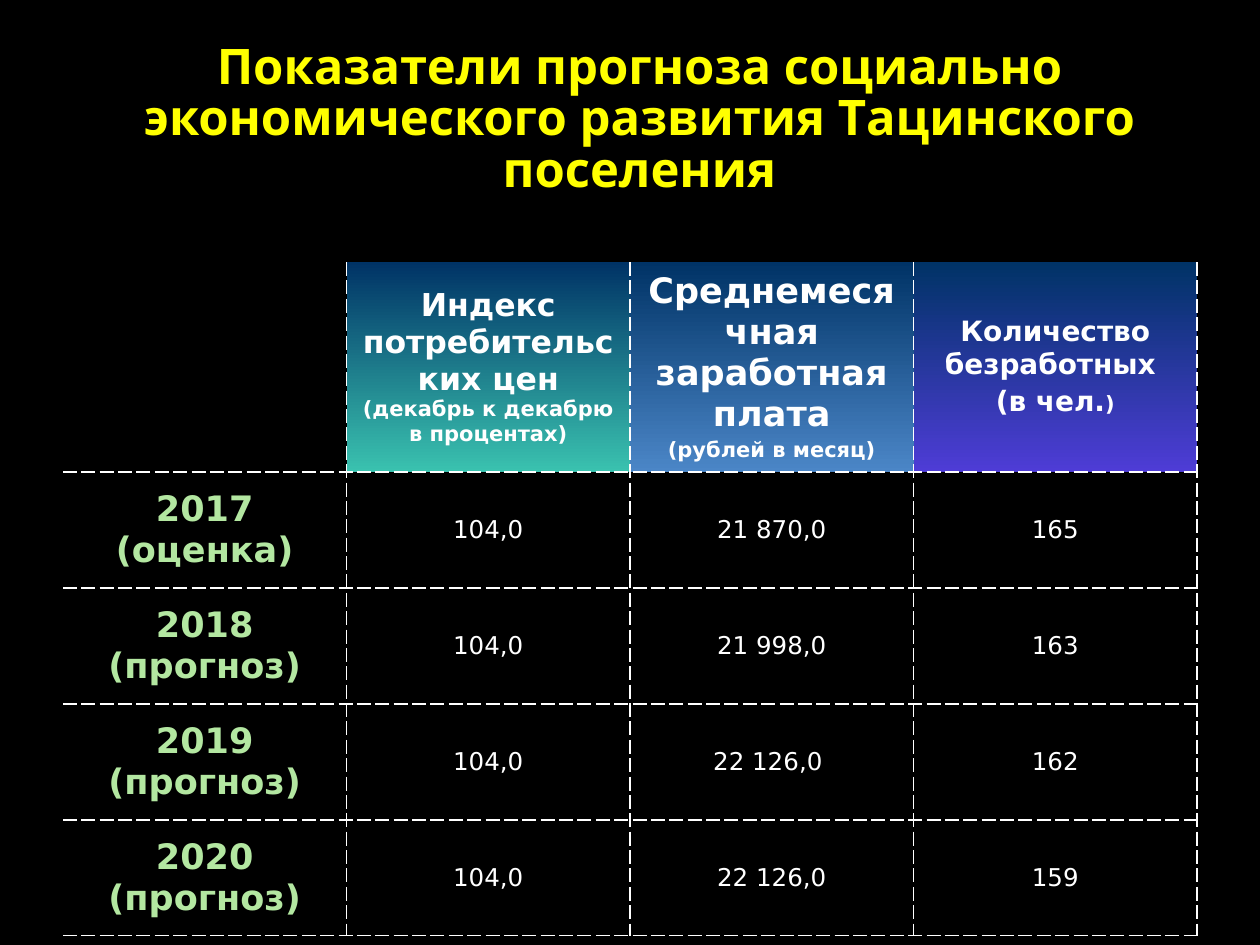
from lxml import etree
from pptx import Presentation
from pptx.dml.color import RGBColor
from pptx.enum import text as t
from pptx.oxml import ns
from pptx.util import Inches, Pt

WHITE, YELLOW, GREEN, NAVY = "FFFFFF", "FFFF00", "B3E7A1", "003366"
TABLE_FONT = "DejaVu Sans"

TITLE = "Показатели прогноза социально экономического развития Тацинского поселения"

# Each heading: gradient end colour, then paragraphs of (text, size) runs
HEADINGS = [
    ("3AC2AF", [[("Индекс потребительских цен ", 18),
                 ("(декабрь к декабрю в процентах)", 12)]]),
    ("4B86C7", [[("Среднемесячная заработная плата", 20)],
                [("(рублей в месяц)", 12)]]),
    ("4E3CD6", [[("Количество безработных ", 16)],
                [("(в чел.", 16), (")", 12)]]),
]
FORECAST = [
    ("2017 (оценка)", "104,0", "21 870,0", "165"),
    ("2018 (прогноз)", "104,0", "21 998,0", "163"),
    ("2019 (прогноз)", "104,0", "22 126,0 ", "162"),
    ("2020 (прогноз)", "104,0", "22 126,0", "159"),
]
COLUMN_WIDTH, HEADING_HEIGHT, YEAR_HEIGHT = 2.25, 1.62, 0.92


def rgb(value):
    return RGBColor.from_string(value)


def write(frame, paragraphs, color, bold, font=TABLE_FONT):
    """Fill a text frame with centred paragraphs of (text, size) runs."""
    for number, runs in enumerate(paragraphs):
        paragraph = frame.add_paragraph() if number else frame.paragraphs[0]
        paragraph.alignment = t.PP_ALIGN.CENTER
        paragraph.space_before = Pt(round(0.2 * runs[0][1], 1))
        for words, size in runs:
            run = paragraph.add_run()
            run.text = words
            run.font.name = font
            run.font.size = Pt(size)
            run.font.bold = bold
            run.font.color.rgb = rgb(color)


def set_borders(cell, sides):
    """Draw dashed white lines on the named sides and none on the others."""
    properties = cell._tc.get_or_add_tcPr()
    for position, side in enumerate("LRTB"):
        line = etree.Element(ns.qn(f"a:ln{side}"), w=str(Pt(1)))
        if side in sides:
            fill = etree.SubElement(line, ns.qn("a:solidFill"))
            etree.SubElement(fill, ns.qn("a:srgbClr"), val=WHITE)
            etree.SubElement(line, ns.qn("a:prstDash"), val="sysDash")
        else:
            etree.SubElement(line, ns.qn("a:noFill"))
        properties.insert(position, line)


def set_gradient(cell, end_color):
    cell.fill.gradient()
    cell.fill.gradient_angle = 270
    for stop, color, position in zip(cell.fill.gradient_stops, (NAVY, end_color), (0, 1)):
        stop.color.rgb = rgb(color)
        stop.position = position


prs = Presentation()
prs.slide_width, prs.slide_height = Inches(10), Inches(7.5)
slide = prs.slides.add_slide(prs.slide_layouts[6])
slide.background.fill.solid()
slide.background.fill.fore_color.rgb = rgb("000000")

title = slide.shapes.add_textbox(Inches(0), Inches(0.29), Inches(10), Inches(1.34)).text_frame
title.word_wrap = True
write(title, [[(TITLE, 28)]], YELLOW, True, "Open Sans")
title.paragraphs[0].line_spacing = 0.88
title.paragraphs[0]._p.get_or_add_pPr().set("marL", str(Inches(0.15)))

rows, columns = len(FORECAST) + 1, len(HEADINGS) + 1
table = slide.shapes.add_table(
    rows, columns, Inches(0.5), Inches(2.08), Inches(columns * COLUMN_WIDTH),
    Inches(HEADING_HEIGHT + len(FORECAST) * YEAR_HEIGHT)).table
for column in table.columns:
    column.width = Inches(COLUMN_WIDTH)
for number, row in enumerate(table.rows):
    row.height = Inches(YEAR_HEIGHT if number else HEADING_HEIGHT)

for r in range(rows):
    for c in range(columns):
        cell = table.cell(r, c)
        cell.vertical_anchor = t.MSO_ANCHOR.MIDDLE
        cell.fill.background()
        set_borders(cell, "RB" + ("L" if c else "") + ("T" if r else ""))

for c, (end_color, paragraphs) in enumerate(HEADINGS, 1):
    set_gradient(table.cell(0, c), end_color)
    write(table.cell(0, c).text_frame, paragraphs, WHITE, True)

for r, (year, *values) in enumerate(FORECAST, 1):
    write(table.cell(r, 0).text_frame, [[(year, 20)]], GREEN, True)
    for c, value in enumerate(values, 1):
        write(table.cell(r, c).text_frame, [[(value, 14)]], WHITE, False)

prs.save("out.pptx")
